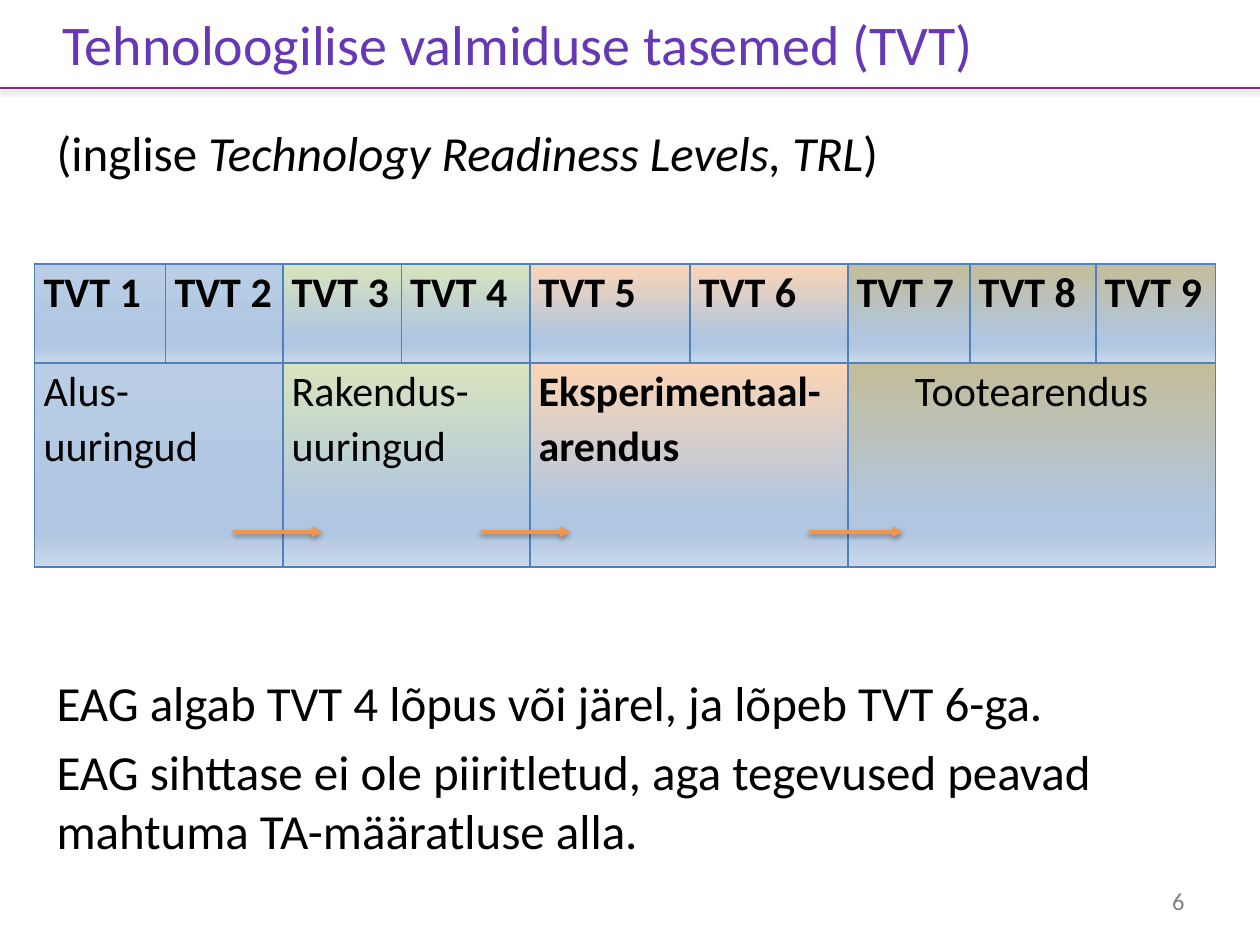
from lxml import etree
from pptx import Presentation
from pptx.dml.color import RGBColor
from pptx.enum import shapes, text
from pptx.oxml import parse_xml
from pptx.oxml.ns import nsdecls, qn
from pptx.util import Cm, Pt

FONT = "Calibri"
BLACK = RGBColor(0x00, 0x00, 0x00)
VIOLET = RGBColor(0x66, 0x38, 0xB6)
PLUM = RGBColor(0x83, 0x2B, 0x7C)
GREY = RGBColor(0x80, 0x80, 0x80)
ORANGE = RGBColor(0xF7, 0x96, 0x46)
EDGE = RGBColor(0x4F, 0x81, 0xBD)
BLUE = RGBColor(0xB9, 0xCD, 0xE5)
GREEN = RGBColor(0xD7, 0xE4, 0xBD)
PEACH = RGBColor(0xFC, 0xD5, 0xB5)
SAND = RGBColor(0xC4, 0xBD, 0x97)
MIST = RGBColor(0xB0, 0xC6, 0xE1)
PALE = RGBColor(0xCA, 0xD9, 0xEB)

# Stages: label, number of levels, colour, bold, alignment
STAGES = [
    ("Alus- uuringud", 2, BLUE, False, text.PP_ALIGN.LEFT),
    ("Rakendus- uuringud", 2, GREEN, False, text.PP_ALIGN.LEFT),
    ("Eksperimentaal- arendus", 2, PEACH, True, text.PP_ALIGN.LEFT),
    ("Tootearendus", 3, SAND, False, text.PP_ALIGN.CENTER),
]
COLS = [2.64, 2.36, 2.39, 2.59, 3.23, 3.18, 2.46, 2.54, 2.41]
ROWS = [2.0, 4.11]
ARROWS = [(4.7, 6.5), (9.7, 11.5), (16.3, 18.2)]


def style(font, size, color, **more):
    vals = {"name": FONT, "size": Pt(size), **more}
    for key, val in vals.items():
        setattr(font, key, val)
    font.color.rgb = color


def add_text(slide, box, paras, size=28):
    """Add a text box; each paragraph is a list of (words, italic)."""
    frame = slide.shapes.add_textbox(*map(Cm, box)).text_frame
    frame.word_wrap = True
    for i, runs in enumerate(paras):
        para = frame.add_paragraph() if i else frame.paragraphs[0]
        if i:
            para.space_before = Pt(size * 0.2)
        for words, slant in runs:
            run = para.add_run()
            run.text = words
            style(run.font, size, BLACK, italic=slant)


def add_line(slide, x1, x2, y, color, width, alpha, dist, head=False):
    """Add a level line with a soft shadow below it."""
    line = slide.shapes.add_connector(
        shapes.MSO_CONNECTOR.STRAIGHT, Cm(x1), Cm(y), Cm(x2), Cm(y))
    line.line.color.rgb = color
    line.line.width = Pt(width)
    if head:
        etree.SubElement(line.line._get_or_add_ln(), qn("a:tailEnd"),
                         type="triangle")
    line._element.spPr.append(parse_xml(
        f'<a:effectLst {nsdecls("a")}><a:outerShdw blurRad="{Pt(3.1)}" '
        f'dist="{Pt(dist)}" dir="5400000" rotWithShape="0">'
        f'<a:srgbClr val="000000"><a:alpha val="{alpha * 1000}"/>'
        '</a:srgbClr></a:outerShdw></a:effectLst>'))


def paint(cell, color):
    """Give a cell its borders and vertical gradient."""
    props = cell._tc.get_or_add_tcPr()
    for side in "LRTB":
        props.append(parse_xml(
            f'<a:ln{side} {nsdecls("a")} w="{Pt(1)}"><a:solidFill>'
            f'<a:srgbClr val="{EDGE}"/></a:solidFill></a:ln{side}>'))
    stops = [(0, color), (74, MIST), (83, MIST), (100, PALE)]
    marks = "".join(f'<a:gs pos="{pos * 1000}"><a:srgbClr val="{tint}"/></a:gs>'
                    for pos, tint in stops)
    props.append(parse_xml(
        f'<a:gradFill {nsdecls("a")}><a:gsLst>{marks}</a:gsLst>'
        '<a:lin ang="5400000" scaled="0"/></a:gradFill>'))


def write(cell, words, bold, align=text.PP_ALIGN.LEFT):
    para = cell.text_frame.paragraphs[0]
    para.alignment = align
    para.line_spacing = 1.07
    run = para.add_run()
    run.text = words
    style(run.font, 24, BLACK, bold=bold)


def add_levels(slide):
    """Add the table of levels, grouped by stage."""
    table = slide.shapes.add_table(
        len(ROWS), len(COLS), Cm(0.7), Cm(5.32),
        Cm(sum(COLS)), Cm(sum(ROWS))).table
    table.first_row = table.horz_banding = False
    for col, width in zip(table.columns, COLS):
        col.width = Cm(width)
    for row, height in zip(table.rows, ROWS):
        row.height = Cm(height)
    margins = {"margin_left": Cm(0.18), "margin_right": Cm(0.18),
               "margin_top": 0, "margin_bottom": 0}
    first = 0
    for label, span, color, bold, align in STAGES:
        for col in range(first, first + span):
            for row in range(len(ROWS)):
                cell = table.cell(row, col)
                for key, val in margins.items():
                    setattr(cell, key, val)
                paint(cell, color)
            write(table.cell(0, col), f"TVT {col + 1}", True)
        stage = table.cell(1, first)
        stage.merge(table.cell(1, first + span - 1))
        write(stage, label, bold, align)
        first += span


def add_title(slide, words):
    title = slide.shapes.title
    box = {"left": 0, "top": 0, "width": Cm(20.9), "height": Cm(1.73)}
    for key, val in box.items():
        setattr(title, key, val)
    frame = title.text_frame
    frame.text = words
    frame.vertical_anchor = text.MSO_ANCHOR.MIDDLE
    para = frame.paragraphs[0]
    para.alignment = text.PP_ALIGN.CENTER
    style(para.runs[0].font, 32, VIOLET)


def add_number(slide, number):
    """Add the slide number as a field."""
    frame = slide.shapes.add_textbox(
        Cm(18.2), Cm(17.65), Cm(5.93), Cm(1.02)).text_frame
    frame.word_wrap = True
    frame.vertical_anchor = text.MSO_ANCHOR.MIDDLE
    para = frame.paragraphs[0]
    para.alignment = text.PP_ALIGN.RIGHT
    para._p.append(parse_xml(
        f'<a:fld {nsdecls("a")} type="slidenum" '
        'id="{B6F15528-21DE-4FAA-801E-634DDDAF4B2B}">'
        f'<a:rPr lang="et-EE" sz="1400"><a:solidFill><a:srgbClr val="{GREY}"/>'
        f'</a:solidFill><a:latin typeface="{FONT}"/></a:rPr>'
        f'<a:t>{number}</a:t></a:fld>'))


def main():
    deck = Presentation()
    deck.slide_width, deck.slide_height = Cm(25.4), Cm(19.05)
    # The slide number field follows the first number of the deck
    deck.element.set("firstSlideNum", "6")
    slide = deck.slides.add_slide(deck.slide_layouts[5])

    # Heading and rule
    add_title(slide, "Tehnoloogilise valmiduse tasemed (TVT)")
    add_line(slide, 0, 25.4, 1.78, PLUM, 1, 25, 1)

    # Text above and below the table
    add_text(slide, (0.89, 2.34, 23.24, 1.5), [
        [("(inglise ", False), ("Technology Readiness Levels, TRL", True),
         (")", False)]])
    add_text(slide, (0.89, 13.44, 23.24, 4.1), [
        [("EAG algab TVT 4 lõpus või järel, ja lõpeb TVT 6-ga.", False)],
        [("EAG sihttase ei ole piiritletud, aga tegevused peavad "
          "mahtuma TA-määratluse alla.", False)]])
    add_number(slide, 6)

    # Levels, with arrows from stage to stage
    add_levels(slide)
    for start, end in ARROWS:
        add_line(slide, start, end, 10.72, ORANGE, 2, 38, 1.6, head=True)

    deck.save("out.pptx")


if __name__ == "__main__":
    main()
